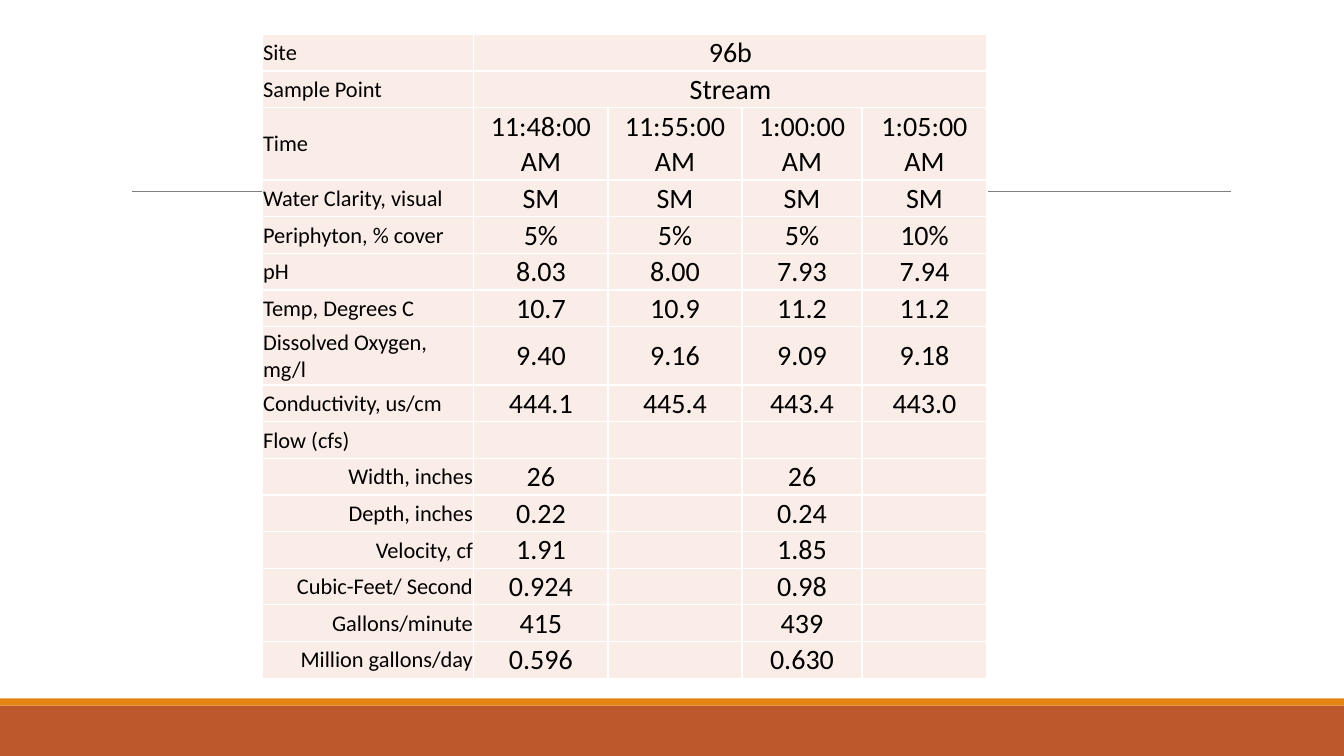
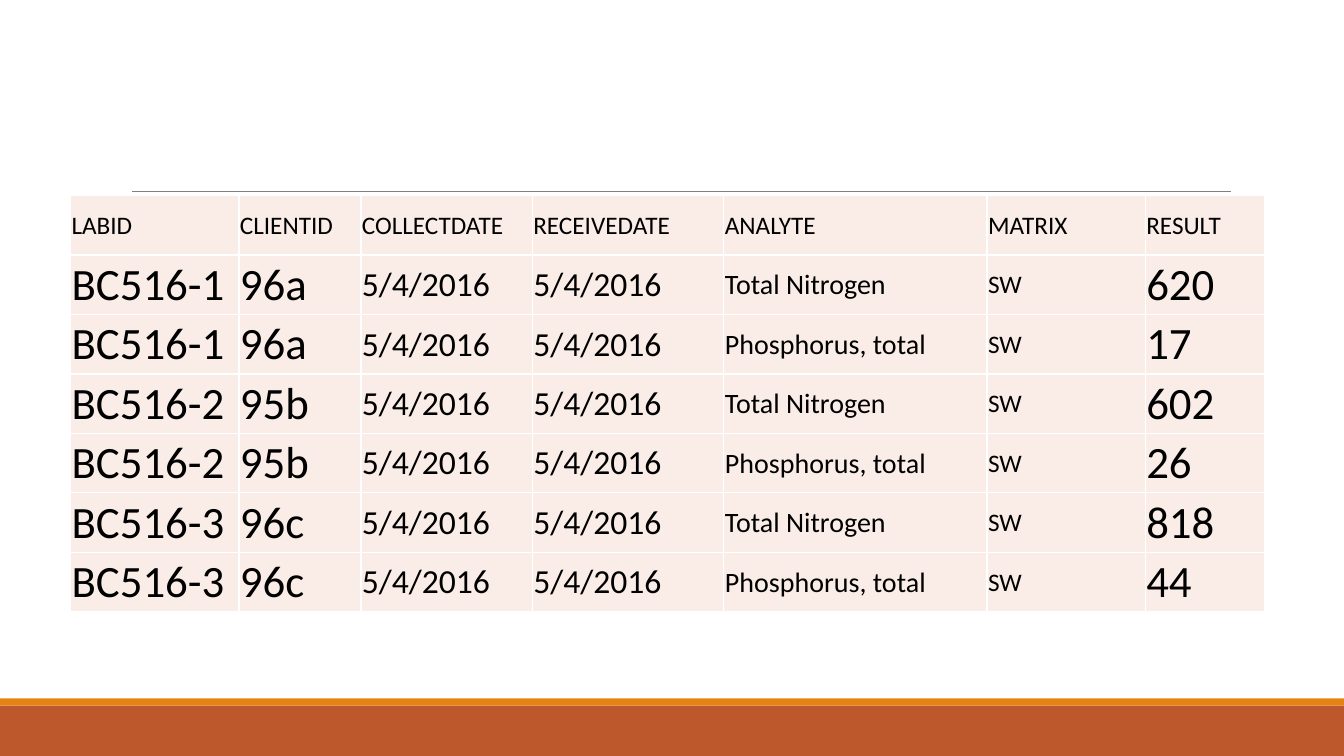
from lxml import etree
from pptx import Presentation
from pptx import util as u
from pptx.dml.color import RGBColor
from pptx.enum import shapes, text
from pptx.oxml import ns

PX = 9144  # 100 px to the inch
SLIDE_W, SLIDE_H = 1333, 750
FONT = "Calibri"
BLACK = RGBColor(0x00, 0x00, 0x00)
WHITE = RGBColor(0xFF, 0xFF, 0xFF)
RUST = RGBColor(0xBD, 0x58, 0x2C)
ORANGE = RGBColor(0xE4, 0x83, 0x12)
GREY = RGBColor(0x80, 0x80, 0x80)
BLUSH = RGBColor(0xFA, 0xED, 0xE7)
LEFT, CENTER, RIGHT = text.PP_ALIGN.LEFT, text.PP_ALIGN.CENTER, text.PP_ALIGN.RIGHT

SITE = [("Site", "96b"), ("Sample Point", "Stream")]
READINGS = [
    ("Time", "11:48:00 AM", "11:55:00 AM", "1:00:00 AM", "1:05:00 AM"),
    ("Water Clarity, visual", "SM", "SM", "SM", "SM"),
    ("Periphyton, % cover", "5%", "5%", "5%", "10%"),
    ("pH", "8.03", "8.00", "7.93", "7.94"),
    ("Temp, Degrees C", "10.7", "10.9", "11.2", "11.2"),
    ("Dissolved Oxygen, mg/l", "9.40", "9.16", "9.09", "9.18"),
    ("Conductivity, us/cm", "444.1", "445.4", "443.4", "443.0"),
    ("Flow (cfs)",),
]
FLOW = [
    ("Width, inches", "26", "", "26"),
    ("Depth, inches", "0.22", "", "0.24"),
    ("Velocity, cf", "1.91", "", "1.85"),
    ("Cubic-Feet/ Second", "0.924", "", "0.98"),
    ("Gallons/minute", "415", "", "439"),
    ("Million gallons/day", "0.596", "", "0.630"),
]
LAB_HEADER = ("LABID", "CLIENTID", "COLLECTDATE", "RECEIVEDATE", "ANALYTE", "MATRIX", "RESULT")
LAB_SAMPLES = [
    ("BC516-1", "96a", "620", "17"),
    ("BC516-2", "95b", "602", "26"),
    ("BC516-3", "96c", "818", "44"),
]
ANALYTES = ("Total Nitrogen", "Phosphorus, total")
LAB_DATE = "5/4/2016"


def add_band(slide, top, height, color):
    band = slide.shapes.add_shape(
        shapes.MSO_SHAPE.RECTANGLE, 0, top * PX, SLIDE_W * PX, height * PX)
    band.shadow.inherit = False
    band.fill.solid()
    band.fill.fore_color.rgb = color
    band.line.fill.background()
    return band


def add_rule(slide, left, right, y):
    rule = slide.shapes.add_connector(
        shapes.MSO_CONNECTOR.STRAIGHT, left * PX, y * PX, right * PX, y * PX)
    rule.line.color.rgb = GREY
    rule.line.width = u.Pt(0.5)
    etree.SubElement(rule.element.spPr, ns.qn("a:effectLst"))
    return rule


def decorate_layout(layout, slide):
    """Draw the shared bands and rule on the slide, then move them to its layout."""
    for part in (add_band(slide, 700, 50, RUST),
                 add_band(slide, 693, 7, ORANGE),
                 add_rule(slide, 131, 1221, 190)):
        layout.shapes.element.append(part.element)


def style_cell(cell):
    cell.margin_left = cell.margin_right = cell.margin_top = PX
    cell.margin_bottom = 0
    cell.vertical_anchor = text.MSO_ANCHOR.MIDDLE
    properties = cell._tc.get_or_add_tcPr()
    for side in ("lnL", "lnR", "lnT", "lnB"):
        border = etree.SubElement(properties, ns.qn(f"a:{side}"), w=str(u.Pt(1)))
        paint = etree.SubElement(border, ns.qn("a:solidFill"))
        etree.SubElement(paint, ns.qn("a:srgbClr"), val=str(WHITE))
    cell.fill.solid()
    cell.fill.fore_color.rgb = BLUSH


def write_cell(cell, words, size, align):
    paragraph = cell.text_frame.paragraphs[0]
    paragraph.alignment = align
    run = paragraph.add_run()
    run.text = words
    run.font.name = FONT
    run.font.size = u.Pt(size)
    run.font.color.rgb = BLACK


def add_data_table(slide, box, widths, rows, cell_format, tall_rows=None):
    """Fill the box; cell_format(row, column) gives size and alignment.

    tall_rows maps row numbers to heights; the other rows share the rest.
    """
    left, top, width, height = (length * PX for length in box)
    tall_rows = tall_rows or {}
    shared = (box[3] - sum(tall_rows.values())) / (len(rows) - len(tall_rows))
    table = slide.shapes.add_table(
        len(rows), len(widths), left, top, width, height).table
    table.first_row = table.horz_banding = False
    for column, column_width in zip(table.columns, widths):
        column.width = column_width * PX
    for r, values in enumerate(rows):
        table.rows[r].height = round(tall_rows.get(r, shared) * PX)
        for c in range(len(widths)):
            style_cell(table.cell(r, c))
        for c, words in enumerate(values):
            if words:
                write_cell(table.cell(r, c), words, *cell_format(r, c))
    return table


def build_stream_slide(slide, box):
    rows = SITE + READINGS + FLOW
    first_flow = len(SITE + READINGS)

    def cell_format(r, c):
        if c:
            return 20, CENTER
        return 16, RIGHT if r >= first_flow else LEFT

    widths = (210, 133, 133, 119, 124)
    table = add_data_table(slide, box, widths, rows, cell_format, {2: 72, 7: 58})
    for r in range(len(SITE)):
        table.cell(r, 1).merge(table.cell(r, len(widths) - 1))


def build_lab_slide(slide, box):
    sizes = (32, 32, 24, 24, 20, 18, 32)
    rows = [LAB_HEADER]
    for lab_id, client_id, *results in LAB_SAMPLES:
        for analyte, result in zip(ANALYTES, results):
            rows.append((lab_id, client_id, LAB_DATE, LAB_DATE, analyte, "SW", result))

    def cell_format(r, c):
        return sizes[c] if r else 18, LEFT

    add_data_table(slide, box, (167, 121, 170, 190, 261, 157, 118), rows, cell_format)


def main():
    deck = Presentation()
    deck.slide_width, deck.slide_height = SLIDE_W * PX, SLIDE_H * PX
    layout = deck.slide_layouts[6]
    stream, lab = (deck.slides.add_slide(layout) for _ in range(2))
    decorate_layout(layout, stream)
    build_stream_slide(stream, (260, 34, 719, 639))
    build_lab_slide(lab, (70, 194, 1184, 413))
    deck.save("out.pptx")


if __name__ == "__main__":
    main()
